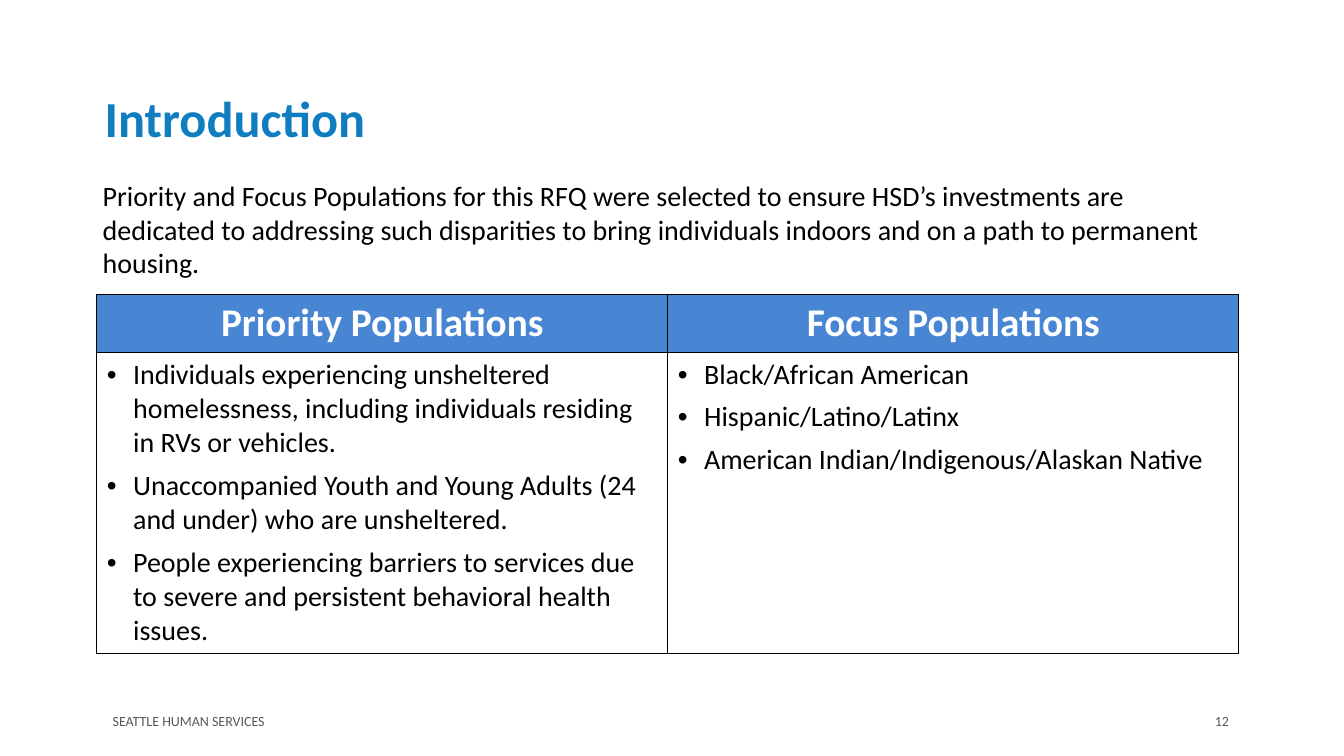
from dataclasses import dataclass
from lxml import etree
from pptx import Presentation
from pptx import util as u
from pptx.dml.color import RGBColor
from pptx.enum import text
from pptx.oxml import ns

Cm, Pt = u.Cm, u.Pt
Align, Anchor = text.PP_ALIGN, text.MSO_ANCHOR


@dataclass(frozen=True)
class Theme:
    face: str = "Calibri"
    title: str = "0F7DC0"
    head: str = "4886D3"
    ink: str = "000000"
    paper: str = "FFFFFF"
    muted: str = "595959"
    title_size: int = 36
    head_size: int = 28
    body_size: int = 20
    foot_size: int = 10


THEME = Theme()
LEFT, WIDTH = 2.44, 28.78
GROUPS = {
    "Priority Populations": [
        "Individuals experiencing unsheltered homelessness, including individuals residing in RVs or vehicles.",
        "Unaccompanied Youth and Young Adults (24 and under) who are unsheltered.",
        "People experiencing barriers to services due to severe and persistent behavioral health issues.",
    ],
    "Focus Populations": [
        "Black/African American",
        "Hispanic/Latino/Latinx",
        "American Indian/Indigenous/Alaskan Native",
    ],
}


def style(para, size, color, bold=False, align=Align.LEFT):
    para.alignment = align
    font = para.font
    font.name, font.size, font.bold = THEME.face, Pt(size), bold
    font.color.rgb = RGBColor.from_string(color)


def add_text(slide, words, area, size, color, bold=False,
             align=Align.LEFT, anchor=Anchor.MIDDLE, inset=(0.25, 0.13)):
    frame = slide.shapes.add_textbox(*map(Cm, area)).text_frame
    frame.word_wrap = True
    frame.vertical_anchor = anchor
    frame.margin_left = frame.margin_right = Cm(inset[0])
    frame.margin_top = frame.margin_bottom = Cm(inset[1])
    frame.text = words
    style(frame.paragraphs[0], size, color, bold, align)


def add_bullet(para):
    props = para._p.get_or_add_pPr()
    props.set("marL", str(Cm(0.66)))
    props.set("indent", str(Cm(-0.66)))
    etree.SubElement(props, ns.qn("a:buFont"), typeface="Arial")
    etree.SubElement(props, ns.qn("a:buChar"), char="•")


def paint(cell, color):
    props = cell._tc.get_or_add_tcPr()
    for side in ("lnL", "lnR", "lnT", "lnB"):
        line = etree.SubElement(props, ns.qn(f"a:{side}"), w=str(Pt(1)))
        fill = etree.SubElement(line, ns.qn("a:solidFill"))
        etree.SubElement(fill, ns.qn("a:srgbClr"), val=THEME.ink)
    cell.fill.solid()
    cell.fill.fore_color.rgb = RGBColor.from_string(color)


def add_groups(slide, top, heights):
    area = (LEFT, top, WIDTH, sum(heights))
    table = slide.shapes.add_table(2, len(GROUPS), *map(Cm, area)).table
    for row, height in zip(table.rows, heights):
        row.height = Cm(height)
    for col, (name, items) in enumerate(GROUPS.items()):
        head, body = table.cell(0, col), table.cell(1, col)
        head.text, body.text = name, "\n".join(items)
        paint(head, THEME.head)
        paint(body, THEME.paper)
        style(head.text_frame.paragraphs[0], THEME.head_size,
              THEME.paper, True, Align.CENTER)
        for para in body.text_frame.paragraphs:
            add_bullet(para)
            para.space_after = Pt(6)
            style(para, THEME.body_size, THEME.ink)


def main():
    deck = Presentation()
    deck.slide_width, deck.slide_height = Cm(33.87), Cm(19.05)
    slide = deck.slides.add_slide(deck.slide_layouts[6])
    add_text(slide, "Introduction", (2.39, 2.06, 28.68, 1.78),
             THEME.title_size, THEME.title, True, anchor=Anchor.BOTTOM)
    add_text(slide, "Priority and Focus Populations for this RFQ were selected to ensure HSD’s "
             "investments are dedicated to addressing such disparities to bring individuals "
             "indoors and on a path to permanent housing.",
             (LEFT, 4.42, WIDTH, 3), THEME.body_size, THEME.ink,
             anchor=Anchor.TOP, inset=(0.15, 0.08))
    add_groups(slide, 7.42, (1.46, 7.58))
    add_text(slide, "SEATTLE HUMAN SERVICES", (2.59, 17.65, 10.72, 1.02),
             THEME.foot_size, THEME.muted)
    add_text(slide, "12", (23.32, 17.65, 7.9, 1.02),
             THEME.foot_size, THEME.muted, align=Align.RIGHT)
    deck.save("out.pptx")


if __name__ == "__main__":
    main()
